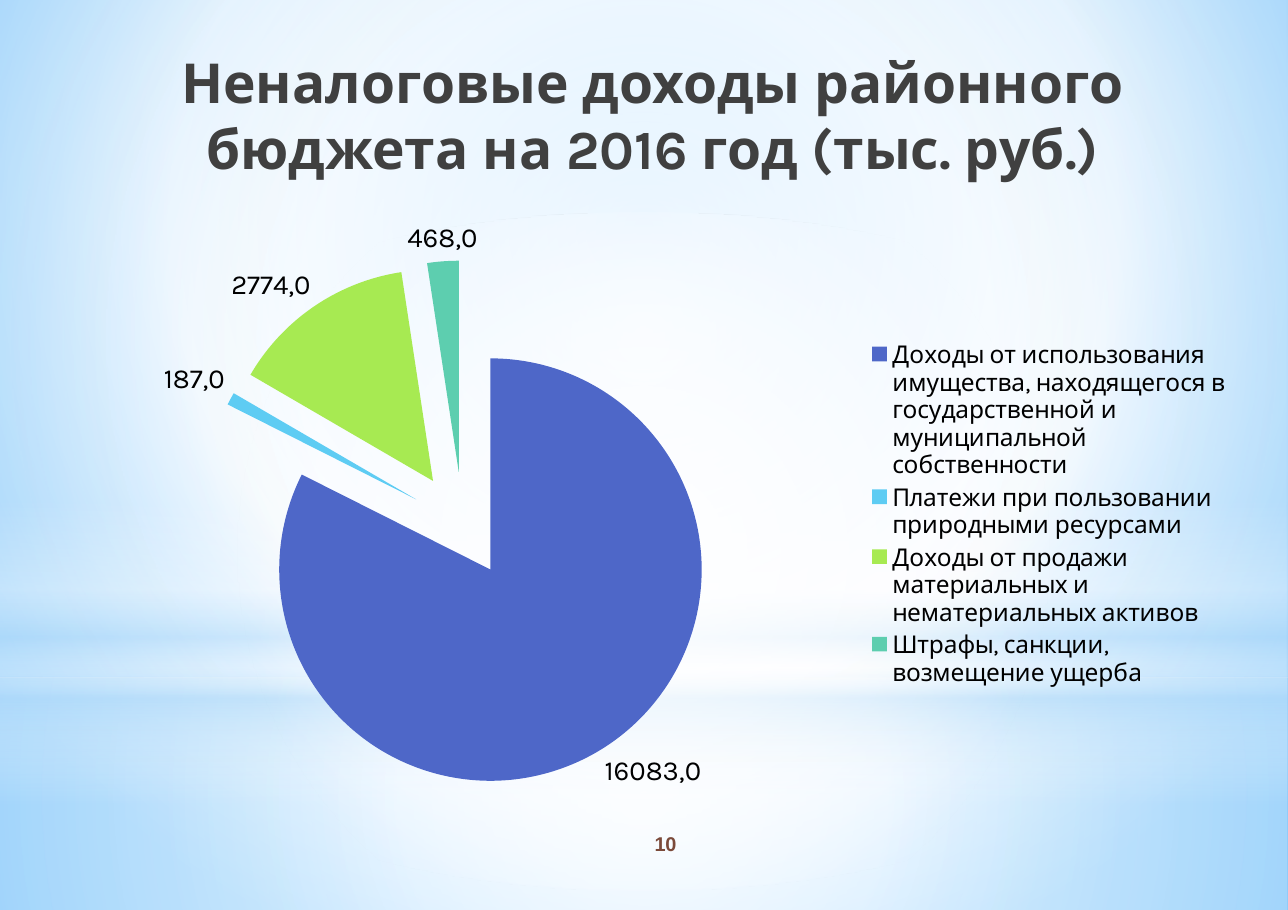
from pptx import Presentation
from pptx.chart.data import CategoryChartData as Data
from pptx.dml.color import RGBColor as RGB
from pptx.enum.chart import XL_CHART_TYPE as Kind, XL_LABEL_POSITION as Spot, XL_LEGEND_POSITION as Side
from pptx.enum.shapes import MSO_SHAPE as Form
from pptx.enum.text import MSO_ANCHOR as Anchor, PP_ALIGN as Align
from pptx.oxml import parse_xml
from pptx.oxml.ns import nsdecls, qn
from pptx.util import Pt

PX = 9144  # 100 px to the inch
WIDE, HIGH = 1169, 826

WHITE = RGB(0xFF, 0xFF, 0xFF)
BLACK = RGB(0, 0, 0)
GREY = RGB(0x40, 0x40, 0x40)
BROWN = RGB(0x7B, 0x4A, 0x3A)
MIST = RGB(0xB4, 0xDC, 0xFA)
SKY = RGB(0x9E, 0xD5, 0xFF)
AZURE = RGB(0x5B, 0xB9, 0xFF)
INDIGO = RGB(0x4E, 0x67, 0xC8)
CYAN = RGB(0x5E, 0xCC, 0xF3)
LIME = RGB(0xA7, 0xEA, 0x52)
TEAL = RGB(0x5D, 0xCE, 0xAF)

MID = (50, 50, 50, 50)
GLOWS = [
    (Form.RECTANGLE, (0, 615, WIDE, 211), MID,
     [(0, WHITE, 91), (37, WHITE, 76), (100, MIST, 79)]),
    (Form.RECTANGLE, (0, 0, WIDE, 615), MID,
     [(0, WHITE, 89), (48, WHITE, 62), (100, MIST, 79)]),
    (Form.RECTANGLE, (0, 454, WIDE, 275), None,
     [(0, WHITE, 0), (29, WHITE, 30), (45, MIST, 40),
      (55, WHITE, 26), (65, MIST, 60), (100, WHITE, 0)]),
    (Form.OVAL, (0, 193, WIDE, 615), MID,
     [(0, WHITE, 100), (56, WHITE, 0)]),
]
INCOME = [
    ("Доходы от использования имущества, находящегося в "
     "государственной и муниципальной собственности", 16083, INDIGO),
    ("Платежи при пользовании природными ресурсами", 187, CYAN),
    ("Доходы от продажи материальных и нематериальных активов", 2774, LIME),
    ("Штрафы, санкции, возмещение ущерба", 468, TEAL),
]


def style(item, look):
    for key, value in look.items():
        if key == "color":
            item.color.rgb = value
        else:
            setattr(item, key, value)


def blend(stops, focus=None):
    """Gradient fill: circular around focus (insets in %), else top to bottom."""
    marks = "".join(
        f'<a:gs pos="{at * 1000}"><a:srgbClr val="{tint}">'
        f'<a:alpha val="{alpha * 1000}"/></a:srgbClr></a:gs>'
        for at, tint, alpha in stops)
    if focus:
        sides = " ".join(f'{k}="{v * 1000}"' for k, v in zip("ltrb", focus))
        course = f'<a:path path="circle"><a:fillToRect {sides}/></a:path>'
    else:
        course = '<a:lin ang="5400000" scaled="0"/>'
    return parse_xml(f'<a:gradFill {nsdecls("a")} rotWithShape="1">'
                     f'<a:gsLst>{marks}</a:gsLst>{course}</a:gradFill>')


def swap(root, fill):
    root.replace(root.find(qn("a:solidFill")), fill)


class Page:
    def __init__(self, deck, face):
        self.slide = deck.slides.add_slide(deck.slide_layouts[6])
        self.shapes = self.slide.shapes
        self.face = face

    def back(self, stops, focus):
        self.slide.background.fill.solid()
        swap(self.slide.element.cSld.find(qn("p:bg")).find(qn("p:bgPr")),
             blend(stops, focus))

    def glow(self, form, box, focus, stops):
        shape = self.shapes.add_shape(form, *(n * PX for n in box))
        shape.shadow.inherit = False
        shape.line.fill.background()
        shape.fill.solid()
        swap(shape.element.spPr, blend(stops, focus))

    def text(self, words, box, look, anchor=Anchor.TOP):
        body = self.shapes.add_textbox(*(n * PX for n in box)).text_frame
        style(body, {"word_wrap": True, "vertical_anchor": anchor,
                     "margin_left": 11 * PX, "margin_right": 11 * PX,
                     "margin_top": 6 * PX, "margin_bottom": 6 * PX})
        line = body.paragraphs[0]
        line.alignment = Align.CENTER
        run = line.add_run()
        run.text = words
        style(run.font, {"name": self.face, "bold": True, **look})
        return run

    def pie(self, rows, box, gap):
        data = Data()
        data.categories = [name for name, *_ in rows]
        data.add_series("Series 1", [value for _, value, _ in rows])
        chart = self.shapes.add_chart(
            Kind.PIE, *(n * PX for n in box), data).chart
        style(chart, {"has_title": False, "has_legend": True})
        font = {"name": self.face, "color": BLACK}
        style(chart.font, {"size": Pt(18), **font})
        style(chart.legend, {"position": Side.RIGHT, "include_in_layout": False})
        style(chart.legend.font, {"size": Pt(16), **font})

        plot = chart.plots[0]
        style(plot, {"vary_by_categories": True, "has_data_labels": True})
        style(plot.data_labels, {
            "show_value": True, "position": Spot.OUTSIDE_END,
            "number_format": '0",0"', "number_format_is_linked": False})
        style(plot.data_labels.font, {"size": Pt(18), **font})

        series = plot.series[0]
        series._element.find(qn("c:tx")).addnext(
            parse_xml(f'<c:explosion {nsdecls("c")} val="{gap}"/>'))
        for i, (_, _, tint) in enumerate(rows):
            fill = series.points[i].format.fill
            fill.solid()
            fill.fore_color.rgb = tint


def main():
    deck = Presentation()
    style(deck, {"slide_width": WIDE * PX, "slide_height": HIGH * PX})
    page = Page(deck, "Karla")
    page.back([(0, SKY, 100), (60, WHITE, 100), (100, AZURE, 100)],
              (20, 10, 20, 60))
    for glow in GLOWS:
        page.glow(*glow)
    page.text("Неналоговые доходы районного бюджета на 2016 год (тыс. руб.)",
              (51, 38, 1083, 158), {"size": Pt(36), "color": GREY})
    page.pie(INCOME, (43, 188, 1085, 558), 25)
    num = page.text("10", (487, 744, 234, 44),
                    {"name": "Arial", "size": Pt(13), "color": BROWN},
                    Anchor.MIDDLE)
    num.font._element.set("spc", "-10")
    deck.save("out.pptx")


if __name__ == "__main__":
    main()
